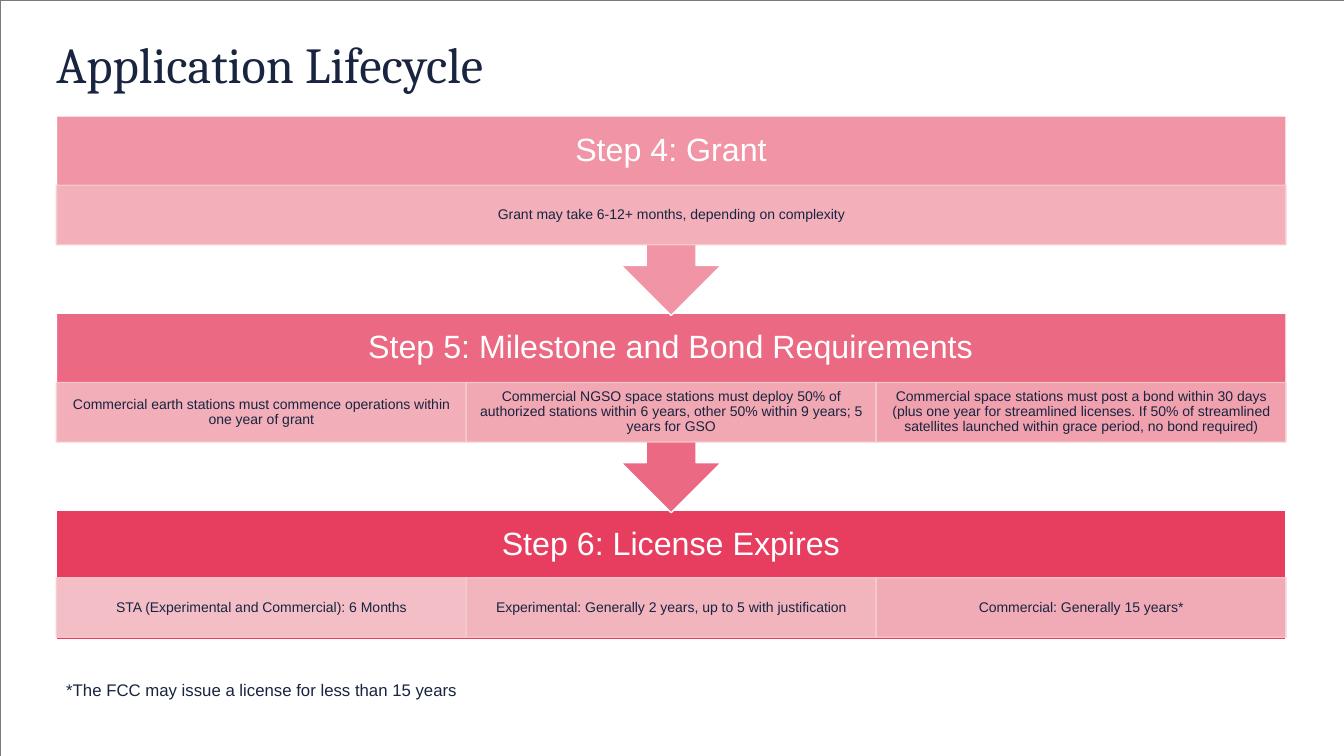
from dataclasses import dataclass

from lxml.etree import SubElement
from pptx import Presentation
from pptx.dml.color import RGBColor
from pptx.dml.fill import FillFormat
from pptx.enum.shapes import MSO_SHAPE
from pptx.enum.text import MSO_ANCHOR, MSO_AUTO_SIZE, PP_ALIGN
from pptx.oxml.ns import qn
from pptx.shapes.autoshape import Shape
from pptx.slide import Slide
from pptx.util import Cm, Pt

COLORS = {
    "paper": "FFFFFF",
    "navy": "182440",
    "red": "E52A4F",
    "pink": "F5CDD0",
    "frame": "7B7B7B",
}
LEFT, WIDTH = 1.42, 30.99
TOP, PITCH = 2.92, 4.97
HEADING_HEIGHT, CELL_HEIGHT = 1.75, 1.5
CALLOUT_HEIGHT, BOX_HEIGHT = 5.03, 3.25


@dataclass
class Box:
    left: float
    top: float
    width: float
    height: float


@dataclass
class Step:
    heading: str
    details: list[str]
    opacity: int
    shape: MSO_SHAPE = MSO_SHAPE.DOWN_ARROW_CALLOUT
    height: float = CALLOUT_HEIGHT
    cell_offset: float = HEADING_HEIGHT


STEPS = [
    Step("Step 4: Grant", ["Grant may take 6-12+ months, depending on complexity"], 50),
    Step(
        "Step 5: Milestone and Bond Requirements",
        [
            "Commercial earth stations must commence operations within one year of grant",
            "Commercial NGSO space stations must deploy 50% of authorized stations "
            "within 6 years, other 50% within 9 years; 5 years for GSO",
            "Commercial space stations must post a bond within 30 days (plus one year "
            "for streamlined licenses. If 50% of streamlined satellites launched "
            "within grace period, no bond required)",
        ],
        70,
    ),
    Step(
        "Step 6: License Expires",
        [
            "STA (Experimental and Commercial): 6 Months",
            "Experimental: Generally 2 years, up to 5 with justification",
            "Commercial: Generally 15 years*",
        ],
        90,
        MSO_SHAPE.RECTANGLE,
        BOX_HEIGHT,
        1.7,
    ),
]


def set_fill(fill: FillFormat, color: str, opacity: float = 100) -> None:
    fill.solid()
    fill.fore_color.rgb = RGBColor.from_string(COLORS[color])
    if opacity < 100:
        clr = fill._xPr.find(f".//{qn('a:srgbClr')}")
        SubElement(clr, qn("a:alpha"), val=str(round(opacity * 1000)))


def add_panel(s: Slide, kind: MSO_SHAPE, box: Box, color: str, opacity: float,
              line: str, line_opacity: float = 100) -> Shape:
    sp = s.shapes.add_shape(kind, Cm(box.left), Cm(box.top), Cm(box.width), Cm(box.height))
    sp.shadow.inherit = False
    set_fill(sp.fill, color, opacity)
    sp.line.width = Pt(1)
    set_fill(sp.line.fill, line, line_opacity)
    return sp


def set_text(sp: Shape, text: str, size: int, color: str, font: str = "Arial",
             inset_x: float = 0, inset_y: float = 0, centered: bool = True) -> None:
    tf = sp.text_frame
    tf.text = text
    tf.word_wrap = True
    tf.margin_left = tf.margin_right = Cm(inset_x)
    tf.margin_top = tf.margin_bottom = Cm(inset_y)
    tf.vertical_anchor = MSO_ANCHOR.MIDDLE if centered else MSO_ANCHOR.TOP
    p = tf.paragraphs[0]
    p.alignment = PP_ALIGN.CENTER if centered else PP_ALIGN.LEFT
    p.line_spacing = 0.9
    r = p.runs[0]
    r.font.size = Pt(size)
    r.font.name = font
    r.font.color.rgb = RGBColor.from_string(COLORS[color])


def add_textbox(s: Slide, box: Box) -> Shape:
    return s.shapes.add_textbox(Cm(box.left), Cm(box.top), Cm(box.width), Cm(box.height))


def add_step(s: Slide, step: Step, top: float) -> None:
    add_panel(s, step.shape, Box(LEFT, top, WIDTH, step.height), "red", step.opacity, "paper")
    heading = add_textbox(s, Box(LEFT, top, WIDTH, HEADING_HEIGHT))
    set_text(heading, step.heading, 23, "paper", inset_x=0.46, inset_y=0.46)
    width = WIDTH / len(step.details)
    for i, detail in enumerate(step.details):
        box = Box(LEFT + i * width, top + step.cell_offset, width, CELL_HEIGHT)
        cell = add_panel(s, MSO_SHAPE.RECTANGLE, box, "pink", step.opacity - i * 20 / 3, "pink", 90)
        set_text(cell, detail, 10, "navy", inset_x=0.2, inset_y=0.03)


def main() -> None:
    prs = Presentation()
    prs.slide_width, prs.slide_height = Cm(33.87), Cm(19.05)
    s = prs.slides.add_slide(prs.slide_layouts[6])
    set_fill(s.background.fill, "paper")

    frame = add_panel(s, MSO_SHAPE.RECTANGLE, Box(0, 0, 33.87, 19.05), "paper", 100, "frame")
    frame.fill.background()
    frame.line.width = Pt(0.15)

    title = add_textbox(s, Box(LEFT, 1.02, WIDTH, 1.6))
    set_text(title, "Application Lifecycle", 36, "navy", "Cambria", centered=False)

    for i, step in reversed(list(enumerate(STEPS))):
        add_step(s, step, TOP + i * PITCH)

    note = add_textbox(s, Box(LEFT, 16.99, 10.57, 0.76))
    set_text(note, "*The FCC may issue a license for less than 15 years", 12, "navy",
             inset_x=0.25, inset_y=0.13, centered=False)
    note.text_frame.word_wrap = False
    note.text_frame.auto_size = MSO_AUTO_SIZE.SHAPE_TO_FIT_TEXT
    note.text_frame.paragraphs[0].line_spacing = 1.0

    prs.save("out.pptx")


if __name__ == "__main__":
    main()
